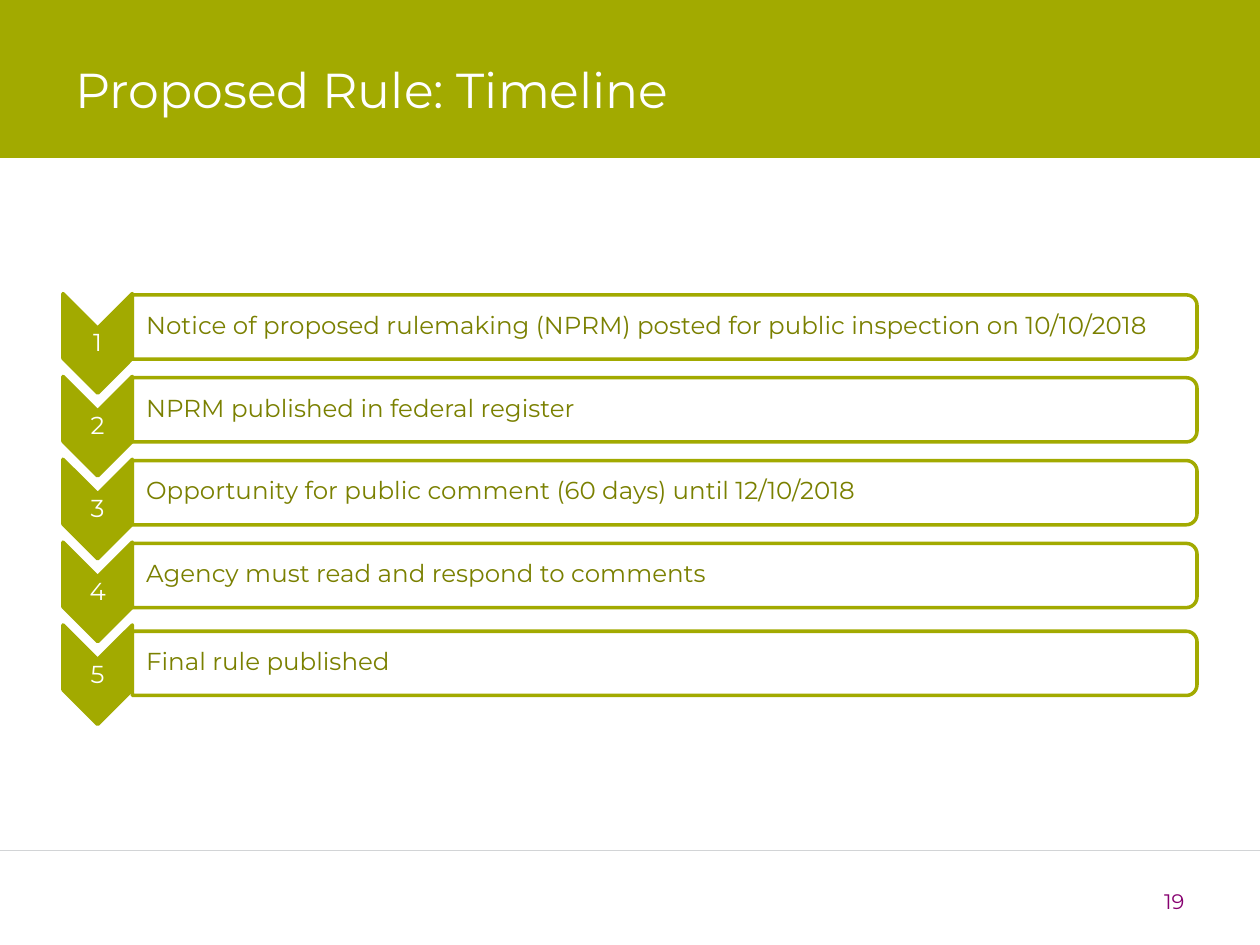
from lxml import etree
from pptx import Presentation
from pptx.dml.color import RGBColor
from pptx.enum import shapes, text
from pptx.oxml import ns
from pptx.util import Inches, Pt

COLORS = {
    "green": "A2AA00",
    "olive": "7A8000",
    "white": "FFFFFF",
    "purple": "870070",
    "rule": "28323C",
}
FONT = "Montserrat"
STEPS = [
    "Notice of proposed rulemaking (NPRM) posted for public inspection on 10/10/2018",
    "NPRM published in federal register",
    "Opportunity for public comment (60 days) until 12/10/2018",
    "Agency must read and respond to comments",
    "Final rule published",
]


def rgb(name):
    return RGBColor.from_string(COLORS[name])


def set_alpha(fill, percent):
    """Make a solid fill partly transparent."""
    color = fill._xPr.find(ns.qn("a:solidFill"))[0]
    etree.SubElement(color, ns.qn("a:alpha"), val=str(percent * 1000))


def write(sp, content, size, color, align=text.PP_ALIGN.LEFT):
    tf = sp.text_frame
    tf.word_wrap = True
    tf.auto_size = text.MSO_AUTO_SIZE.NONE
    tf.vertical_anchor = text.MSO_ANCHOR.MIDDLE
    tf.text = content
    p = tf.paragraphs[0]
    p.alignment = align
    r = p.runs[0]
    r.font.size, r.font.name = Pt(size), FONT
    r.font.color.rgb = rgb(color)
    return tf


def add_label(s, box, content, color, align, left_inset):
    sp = s.shapes.add_textbox(*map(Inches, box))
    tf = write(sp, content, 14, color, align)
    tf.margin_top = tf.margin_right = tf.margin_bottom = Inches(0.01)
    tf.margin_left = Inches(left_inset)
    tf.paragraphs[0].line_spacing = 0.9


def add_turned(s, kind, box, fill, line_width=2):
    """Add a shape turned a quarter clockwise that fills the box as seen."""
    x, y, w, h = box
    left, top = x + (w - h) / 2, y + (h - w) / 2
    sp = s.shapes.add_shape(kind, *map(Inches, (left, top, h, w)))
    sp.rotation = 90
    sp.shadow.inherit = False
    sp.fill.solid()
    sp.fill.fore_color.rgb = rgb(fill)
    sp.line.color.rgb = rgb("green")
    sp.line.width = Pt(line_width)
    return sp


def add_header(s, box):
    band = s.shapes.add_shape(shapes.MSO_SHAPE.RECTANGLE, *map(Inches, box))
    band.shadow.inherit = False
    band.fill.solid()
    band.fill.fore_color.rgb = rgb("green")
    band.line.color.rgb = rgb("green")
    band.line.width = Pt(0.75)

    # Title goes in front of the band
    x, y, w, h = box
    title = s.shapes.title
    title.left, title.top = Inches(x + 0.5), Inches(y + 0.08)
    title.width, title.height = Inches(w - 1), Inches(h)
    write(title, "Proposed Rule: Timeline", 28, "white")
    s.shapes._spTree.append(title._element)


def add_step(s, box, number, content, bar_drop):
    x, y, w, h = box
    arrow_w, bar_h = 0.55, 0.51

    # Numbered chevron
    add_turned(s, shapes.MSO_SHAPE.CHEVRON, (x, y, arrow_w, h), "green")
    add_label(s, (x, y + 0.28, arrow_w, 0.24), str(number), "white",
              text.PP_ALIGN.CENTER, 0.01)

    # Bar and its wording
    bar_x, bar_y, bar_w = x + arrow_w, y + bar_drop, w - arrow_w
    bar = add_turned(s, shapes.MSO_SHAPE.ROUND_2_SAME_RECTANGLE,
                     (bar_x, bar_y, bar_w, bar_h), "white")
    set_alpha(bar.fill, 90)
    add_label(s, (bar_x, bar_y + 0.02, bar_w - 0.03, 0.46), content, "olive",
              text.PP_ALIGN.LEFT, 0.11)


def add_timeline(s, box):
    x, y, w, h = box
    step_h = 0.79
    pitch = (h - step_h) / (len(STEPS) - 1)
    for i, content in enumerate(STEPS):
        # The last bar sits slightly lower than the others
        drop = 0.05 if i == len(STEPS) - 1 else 0.01
        add_step(s, (x, y + i * pitch, w, step_h), i + 1, content, drop)


def add_footer(s, box):
    x, y, w, h = box
    rule = s.shapes.add_connector(shapes.MSO_CONNECTOR.STRAIGHT, Inches(x),
                                  Inches(y), Inches(x + w), Inches(y))
    rule.line.color.rgb = rgb("rule")
    rule.line.width = Pt(0.2)
    set_alpha(rule.line.fill, 58)
    etree.SubElement(rule._element.spPr, ns.qn("a:effectLst"))

    # Page number
    sp = s.shapes.add_textbox(Inches(x + w - 2.83), Inches(y + 0.2),
                              Inches(2.33), Inches(0.4))
    write(sp, "19", 12, "purple", text.PP_ALIGN.RIGHT)


def main():
    prs = Presentation()
    prs.slide_width, prs.slide_height = Inches(10), Inches(7.5)
    s = prs.slides.add_slide(prs.slide_layouts[5])
    add_header(s, (0, 0, 10, 1.25))
    add_timeline(s, (0.5, 2.33, 9, 3.42))
    add_footer(s, (0, 6.75, 10, 0.75))
    prs.save("out.pptx")


if __name__ == "__main__":
    main()
